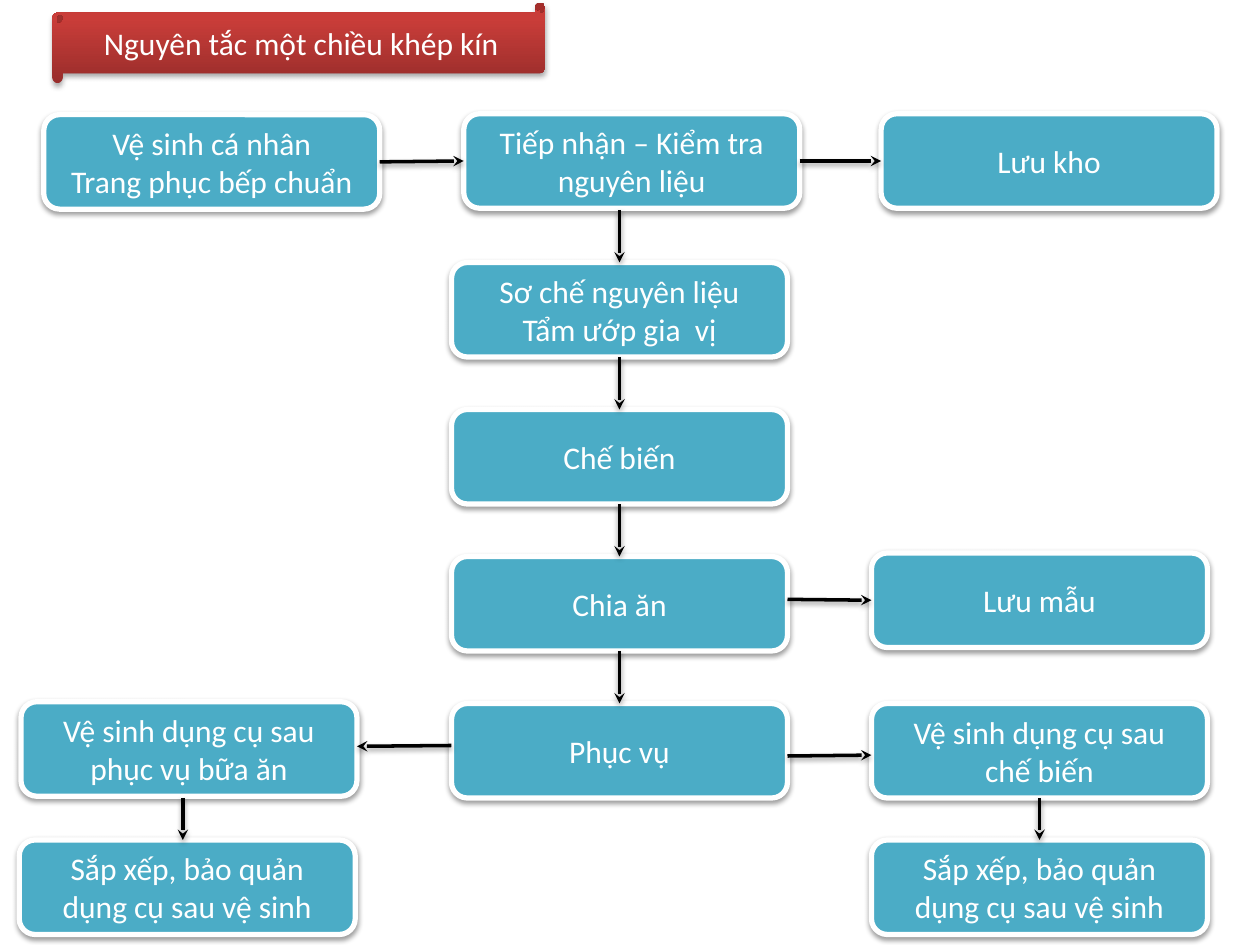
from dataclasses import dataclass
from copy import deepcopy
from itertools import pairwise
from typing import Union

from lxml.etree import SubElement
from pptx import Presentation
from pptx.dml.color import RGBColor
from pptx.enum.shapes import MSO_CONNECTOR, MSO_SHAPE
from pptx.enum.text import MSO_ANCHOR, PP_ALIGN
from pptx.oxml.ns import qn
from pptx.util import Pt

BOX_W, BOX_H = 192, 54
MID_X, RIGHT_X = 258, 498
CENTER_X = MID_X + BOX_W / 2
STEP_TOP, STEP_GAP = 150, 84
TOP, BOTTOM, LAST_TOP = 0, 2, 480
LEFT, RIGHT = 1, 3
WHITE, BLACK, TEAL = "FFFFFF", "000000", "4BACC6"
BANNER_STOPS = [(0, "992D2B"), (0.8, "C93D39"), (1, "CD3A36")]
TEXT = {"name": "Calibri", "size": Pt(18)}
FRAME = {"word_wrap": True, "vertical_anchor": MSO_ANCHOR.MIDDLE}


@dataclass
class Box:
    key: str
    x: float
    y: float
    text: str


@dataclass
class Site:
    """A connection site of a box: 0 top, 1 left, 2 bottom, 3 right."""
    key: str
    index: int


@dataclass
class Point:
    x: float
    y: float


End = Union[Site, Point]


@dataclass
class Arrow:
    start: End
    end: End


STEPS = [("prepare", "Sơ chế nguyên liệu\nTẩm ướp gia  vị"), ("cook", "Chế biến"),
         ("portion", "Chia ăn"), ("serve", "Phục vụ")]
STORE_TOOLS = "Sắp xếp, bảo quản dụng cụ sau vệ sinh"

BOXES = [
    Box("hygiene", 25, 65.5, "Vệ sinh cá nhân\nTrang phục bếp chuẩn"),
    Box("receive", 265, 65, "Tiếp nhận – Kiểm tra nguyên liệu"),
    Box("store", 503.5, 65, "Lưu kho"),
    *(Box(key, MID_X, STEP_TOP + i * STEP_GAP, text) for i, (key, text) in enumerate(STEPS)),
    Box("sample", RIGHT_X, 316, "Lưu mẫu"),
    Box("wash_serving", 12, 401, "Vệ sinh dụng cụ sau phục vụ bữa ăn"),
    Box("tidy_serving", 11, LAST_TOP, STORE_TOOLS),
    Box("wash_cooking", RIGHT_X, 402, "Vệ sinh dụng cụ sau chế biến"),
    Box("tidy_cooking", RIGHT_X, LAST_TOP, STORE_TOOLS),
]

ARROWS = [
    Arrow(Site("hygiene", RIGHT), Site("receive", LEFT)),
    Arrow(Site("receive", RIGHT), Site("store", LEFT)),
    Arrow(Point(CENTER_X, 120), Site("prepare", TOP)),
    *(Arrow(Site(a, BOTTOM), Site(b, TOP)) for (a, _), (b, _) in pairwise(STEPS)),
    Arrow(Point(450, 342.5), Site("sample", LEFT)),
    Arrow(Point(450, 432), Point(RIGHT_X, 431.5)),
    Arrow(Site("wash_cooking", BOTTOM), Site("tidy_cooking", TOP)),
    Arrow(Point(MID_X, 426), Point(204, 426.5)),
    Arrow(Point(104.5, 456), Point(104.5, LAST_TOP)),
]


def rgb(value: str) -> RGBColor:
    return RGBColor.from_string(value)


def apply(target, values: dict) -> None:
    for name, value in values.items():
        setattr(target, name, value)


def add_shadow(sp, dist: float = 1.6, alpha: int = 38) -> None:
    effects = SubElement(sp._element.spPr, qn("a:effectLst"))
    shadow = SubElement(effects, qn("a:outerShdw"), blurRad=str(Pt(3.1)),
                        dist=str(Pt(dist)), dir="5400000", rotWithShape="0")
    color = SubElement(shadow, qn("a:srgbClr"), val=BLACK)
    SubElement(color, qn("a:alpha"), val=str(alpha * 1000))


def write(sp, text: str) -> None:
    tf = sp.text_frame
    apply(tf, FRAME)
    tf.text = text
    for p in tf.paragraphs:
        p.alignment = PP_ALIGN.CENTER
        for r in p.runs:
            apply(r.font, TEXT)
            r.font.color.rgb = rgb(WHITE)


def add_box(s, box: Box):
    sp = s.shapes.add_shape(MSO_SHAPE.ROUNDED_RECTANGLE, Pt(box.x), Pt(box.y),
                            Pt(BOX_W), Pt(BOX_H))
    sp.fill.solid()
    sp.fill.fore_color.rgb = rgb(TEAL)
    sp.line.color.rgb = rgb(WHITE)
    sp.line.width = Pt(3)
    add_shadow(sp)
    write(sp, box.text)
    return sp


def add_banner(s, text: str) -> None:
    sp = s.shapes.add_shape(MSO_SHAPE.HORIZONTAL_SCROLL, Pt(30), Pt(1.5), Pt(281.5), Pt(46))
    sp.fill.gradient()
    sp.fill.gradient_angle = 90
    stop_list = sp._element.spPr.find(".//" + qn("a:gsLst"))
    stop_list.append(deepcopy(stop_list[-1]))
    for stop, (position, color) in zip(sp.fill.gradient_stops, BANNER_STOPS):
        stop.position = position
        stop.color.rgb = rgb(color)
    sp.line.fill.background()
    add_shadow(sp, dist=1.8, alpha=35)
    write(sp, text)


def add_arrow(s, arrow: Arrow, shapes: dict) -> None:
    start, end = (e if isinstance(e, Point) else Point(0, 0) for e in (arrow.start, arrow.end))
    line = s.shapes.add_connector(MSO_CONNECTOR.STRAIGHT, Pt(start.x), Pt(start.y),
                                  Pt(end.x), Pt(end.y))
    for join, site in ((line.begin_connect, arrow.start), (line.end_connect, arrow.end)):
        if isinstance(site, Site):
            join(shapes[site.key], site.index)
    line.line.color.rgb = rgb(BLACK)
    line.line.width = Pt(2)
    SubElement(line._element.spPr.find(qn("a:ln")), qn("a:tailEnd"), type="stealth")
    add_shadow(line)


def main() -> None:
    prs = Presentation()
    prs.slide_width, prs.slide_height = Pt(720), Pt(540)
    s = prs.slides.add_slide(prs.slide_layouts[6])
    shapes = {box.key: add_box(s, box) for box in BOXES}
    for arrow in ARROWS:
        add_arrow(s, arrow, shapes)
    add_banner(s, "Nguyên tắc một chiều khép kín")
    prs.save("out.pptx")


if __name__ == "__main__":
    main()
